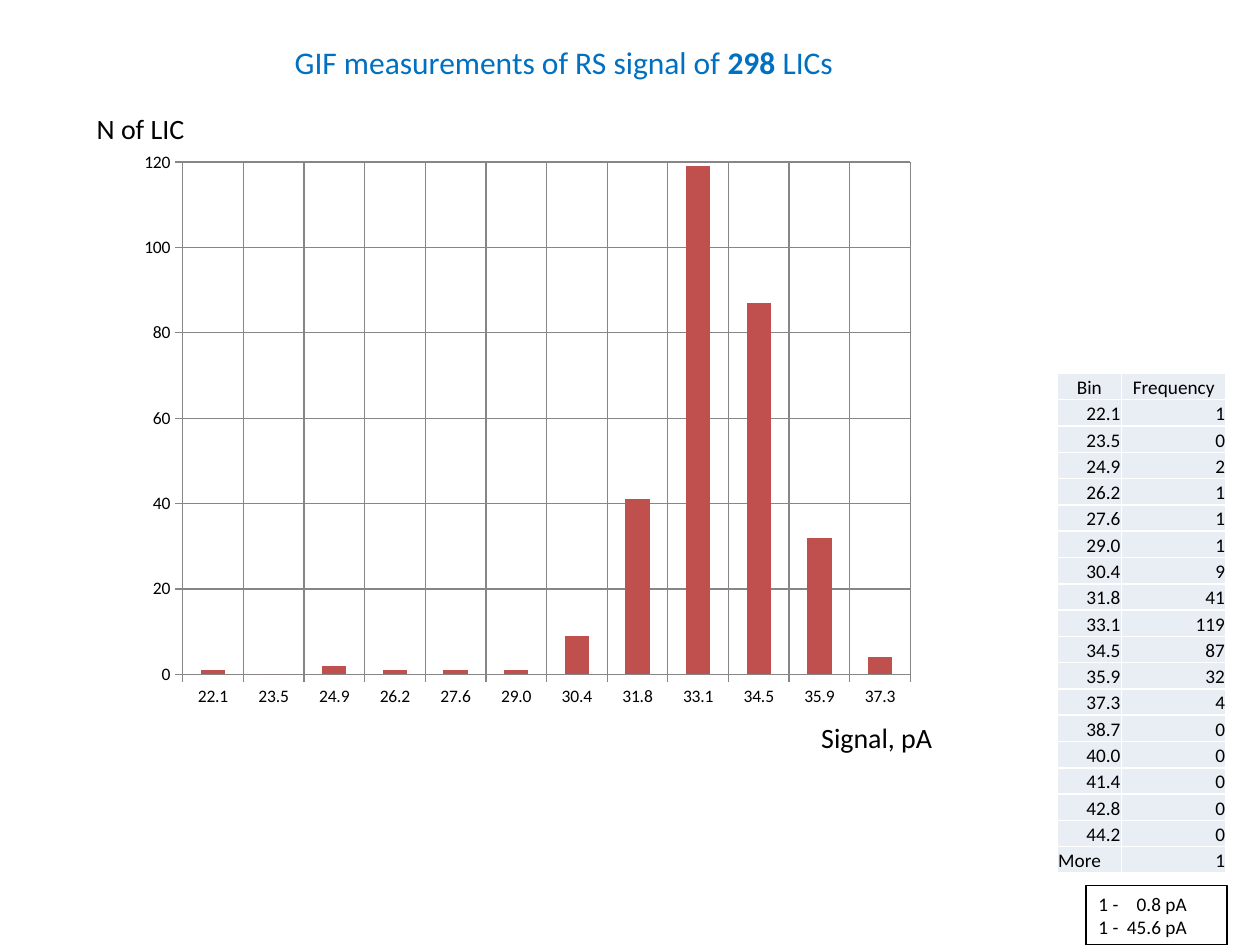
import lxml.etree
import pptx
import pptx.chart.data
import pptx.dml.color
import pptx.enum.chart
import pptx.enum.shapes
import pptx.enum.text
import pptx.oxml
import pptx.oxml.ns
import pptx.util

Pt = pptx.util.Pt
RGBColor = pptx.dml.color.RGBColor
ALIGN = pptx.enum.text.PP_ALIGN
qn = pptx.oxml.ns.qn
BLACK = RGBColor(0x00, 0x00, 0x00)
BLUE = RGBColor(0x00, 0x70, 0xC0)
RED = RGBColor(0xC0, 0x50, 0x4D)
GRAY = RGBColor(0x86, 0x86, 0x86)
PALE = RGBColor(0xE9, 0xED, 0xF4)
FONT = "Calibri"


def style(font, size, color=BLACK):
    font.name = FONT
    font.size = Pt(size)
    font.color.rgb = color


def add_label(left, top, width, height, parts, size, color=BLACK):
    sp = s.shapes.add_textbox(Pt(left), Pt(top), Pt(width), Pt(height))
    tf = sp.text_frame
    tf.word_wrap = False
    tf.auto_size = pptx.enum.text.MSO_AUTO_SIZE.SHAPE_TO_FIT_TEXT
    for text, bold in parts:
        r = tf.paragraphs[0].add_run()
        r.text = text
        r.font.bold = bold
        style(r.font, size, color)


prs = pptx.Presentation()
prs.slide_width = Pt(720)
prs.slide_height = Pt(540)
s = prs.slides.add_slide(prs.slide_layouts[6])

bins = ["22.1", "23.5", "24.9", "26.2", "27.6", "29.0", "30.4", "31.8", "33.1",
        "34.5", "35.9", "37.3", "38.7", "40.0", "41.4", "42.8", "44.2", "More"]
counts = [1, 0, 2, 1, 1, 1, 9, 41, 119, 87, 32, 4, 0, 0, 0, 0, 0, 1]

data = pptx.chart.data.CategoryChartData()
data.categories = bins[:12]
data.add_series("Series 1", counts[:12])
chart = s.shapes.add_chart(
    pptx.enum.chart.XL_CHART_TYPE.COLUMN_CLUSTERED,
    Pt(70.5), Pt(82.8), Pt(471), Pt(351.4), data).chart
chart.has_legend = False
chart.has_title = False
style(chart.font, 10)
plot = chart.plots[0]
plot.gap_width = 150
plot.vary_by_categories = False
fill = plot.series[0].format.fill
fill.solid()
fill.fore_color.rgb = RED
for axis in (chart.category_axis, chart.value_axis):
    axis.has_major_gridlines = True
    axis.major_tick_mark = pptx.enum.chart.XL_TICK_MARK.OUTSIDE
    for line in (axis.format.line, axis.major_gridlines.format.line):
        line.color.rgb = GRAY
        line.width = Pt(0.75)
chart.value_axis.minimum_scale = 0
chart.value_axis.maximum_scale = 120
chart.value_axis.major_unit = 20

area = chart.element.find(".//" + qn("c:plotArea"))
for old in area.findall(qn("c:layout")):
    area.remove(old)
layout = lxml.etree.Element(qn("c:layout"))
manual = lxml.etree.SubElement(layout, qn("c:manualLayout"))
for tag, val in (("layoutTarget", "inner"), ("xMode", "edge"), ("yMode", "edge"),
                 ("x", "0.072"), ("y", "0.028"), ("w", "0.883"), ("h", "0.833")):
    lxml.etree.SubElement(manual, qn("c:" + tag)).set("val", val)
area.insert(0, layout)

rows = [("Bin", "Frequency")] + list(zip(bins, counts))
table = s.shapes.add_table(
    len(rows), 2, Pt(604.1), Pt(213.4), Pt(96.5), Pt(285.8)).table
table.first_row = False
table.horz_banding = False
table.columns[0].width = Pt(36.8)
table.columns[1].width = Pt(59.7)
for i, row in enumerate(rows):
    table.rows[i].height = Pt(15.04)
    for j, value in enumerate(row):
        cell = table.cell(i, j)
        cell.margin_left = cell.margin_right = cell.margin_top = Pt(0.6)
        cell.margin_bottom = 0
        cell.vertical_anchor = pptx.enum.text.MSO_ANCHOR.BOTTOM
        cell.text_frame.text = str(value)
        p = cell.text_frame.paragraphs[0]
        p.alignment = (ALIGN.CENTER if i == 0 else
                       ALIGN.LEFT if value == "More" else ALIGN.RIGHT)
        style(p.runs[0].font, 11)
        tcPr = cell._tc.get_or_add_tcPr()
        for side in ("lnL", "lnR", "lnT", "lnB"):
            ln = lxml.etree.SubElement(tcPr, qn("a:" + side), w=str(Pt(1)))
            solid = lxml.etree.SubElement(ln, qn("a:solidFill"))
            lxml.etree.SubElement(solid, qn("a:srgbClr"), val="FFFFFF")
        cell.fill.solid()
        cell.fill.fore_color.rgb = PALE

add_label(161.3, 20.9, 325.4, 28.8,
          [("GIF measurements of RS signal of ", False), ("298", True), (" LICs", False)],
          18, BLUE)

sp = s.shapes.add_shape(pptx.enum.shapes.MSO_SHAPE.RECTANGLE,
                        Pt(620.6), Pt(506.2), Pt(80.6), Pt(33.8))
sp.shadow.inherit = False
sp.fill.background()
sp.line.color.rgb = BLACK
sp.line.width = Pt(0.75)
tf = sp.text_frame
tf.word_wrap = True
tf.vertical_anchor = pptx.enum.text.MSO_ANCHOR.TOP
tf.text = "1 -\t0.8 pA\n1 -\t45.6 pA"
for p in tf.paragraphs:
    p.alignment = ALIGN.LEFT
    tabs = lxml.etree.SubElement(p._p.get_or_add_pPr(), qn("a:tabLst"))
    lxml.etree.SubElement(tabs, qn("a:tab"), pos=str(Pt(50.5)), algn="r")
    for r in p.runs:
        style(r.font, 11)

add_label(48.2, 60.5, 65.5, 26.6, [("N of LIC", False)], 16)
add_label(462.2, 408.2, 78.5, 26.6, [("Signal, pA", False)], 16)

prs.save("out.pptx")
